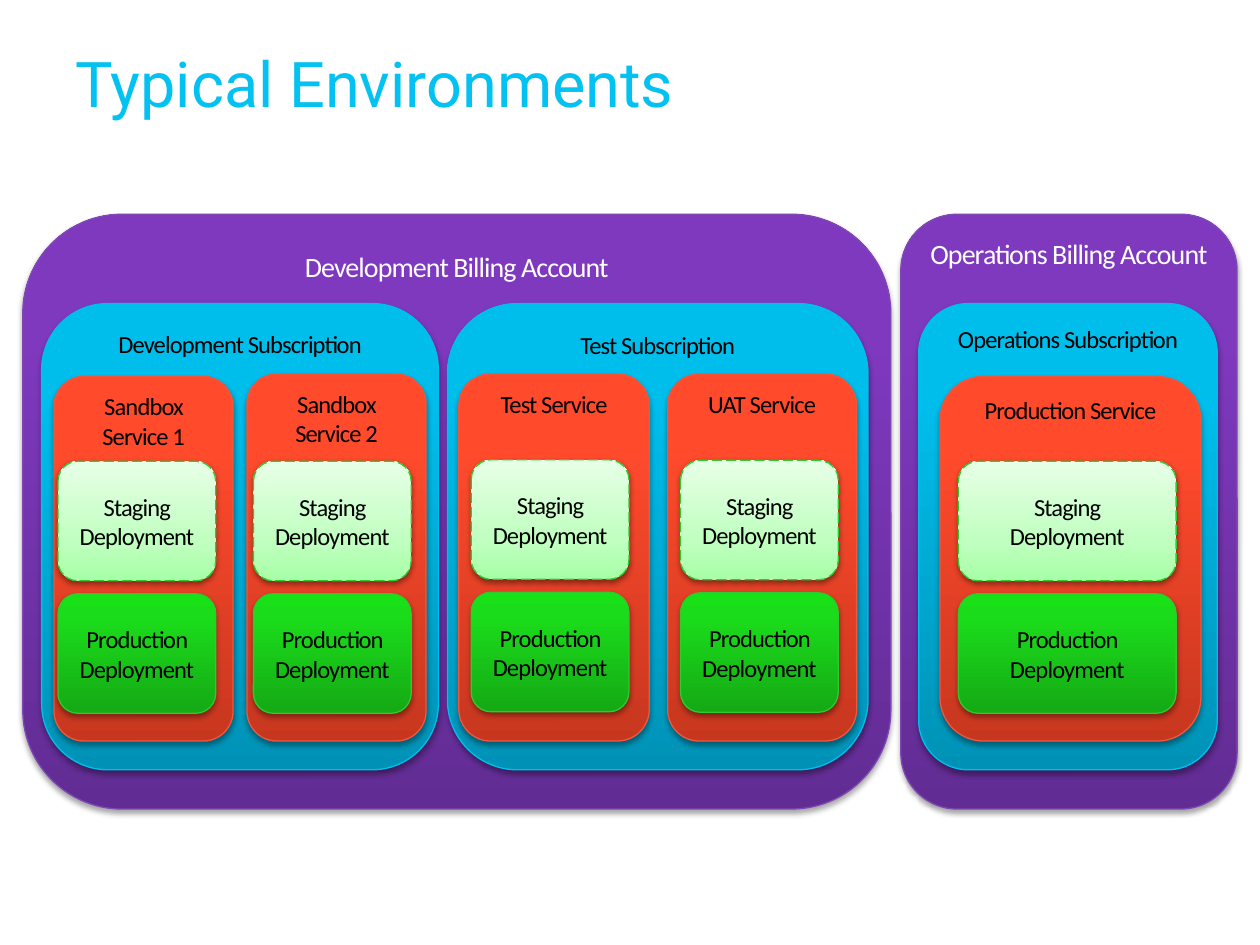
"""Build the slide of typical environments: accounts, subscriptions, services and deployments."""
from lxml.etree import SubElement
from pptx import Presentation
from pptx.dml.color import RGBColor
from pptx.enum.dml import MSO_LINE
from pptx.enum.shapes import MSO_SHAPE
from pptx.enum.text import MSO_ANCHOR, PP_ALIGN
from pptx.oxml.ns import qn
from pptx.util import Cm, Pt

TITLE = "Typical Environments"

# name, left, width
ACCOUNTS = [
    ("Development Billing Account", 0.46, 17.5),
    ("Operations Billing Account", 18.16, 6.78),
]
SUBSCRIPTIONS = [
    ("Test Subscription", 9.02, 8.48),
    ("Development Subscription", 0.84, 8.0),
    ("Operations Subscription", 18.52, 6.02),
]
# name, left, top, width, deployment left, deployment top, deployment width
SERVICES = [
    ("Sandbox Service 1", 1.09, 7.59, 3.61, 1.17, 9.3, 3.18),
    ("Sandbox Service 2", 4.98, 7.54, 3.61, 5.11, 9.3, 3.18),
    ("Test Service", 9.25, 7.54, 3.84, 9.5, 9.27, 3.18),
    ("UAT Service", 13.46, 7.54, 3.81, 13.72, 9.28, 3.18),
    ("Production Service", 18.95, 7.59, 5.26, 19.32, 9.3, 4.39),
]
DEPLOYMENTS = ["Staging Deployment", "Production Deployment"]

ACCOUNT_TOP, ACCOUNT_HEIGHT = 4.32, 11.99
SUBSCRIPTION_TOP, SUBSCRIPTION_HEIGHT = 6.12, 9.4
SERVICE_BOTTOM = 14.94
DEPLOYMENT_HEIGHT, DEPLOYMENT_PITCH = 2.41, 2.67

PURPLE = {"stops": [(0, "612C93"), (80, "7F39BF"), (100, "7F37C2")], "line": "7F47B4"}
BLUE = {"stops": [(0, "0092B6"), (80, "00BEEC"), (100, "00BFEE")], "line": "00BFEF"}
RED = {"stops": [(0, "C7371F"), (80, "FF4A2C"), (100, "FF4B2E")], "line": "F0573E"}
GREEN = {"stops": [(0, "15A915"), (80, "1BDC1B"), (100, "18E118")], "line": "2ECB2E"}
PALE = {"stops": [(0, "A7FFA7"), (35, "C1FFC1"), (100, "E7FFE7")], "line": "2ECB2E",
        "dash": MSO_LINE.LONG_DASH, "shadow": (38, 1.6)}


def color(value):
    return RGBColor.from_string(value)


def write(shape, text, size=14, font="Calibri", ink="000000", align=PP_ALIGN.CENTER,
          anchor=MSO_ANCHOR.TOP, spacing=-0.5):
    frame = shape.text_frame
    frame.word_wrap = True
    frame.vertical_anchor = anchor
    para = frame.paragraphs[0]
    para.alignment = align
    span = para.add_run()
    span.text = text
    span.font.size = Pt(size)
    span.font.name = font
    span.font.color.rgb = color(ink)
    span.font._element.set("spc", str(round(spacing * 100)))


def add_gradient(shape, stops):
    shape.fill.gradient()
    shape.fill.gradient_angle = 90
    stop_list = shape.element.spPr.find(qn("a:gradFill")).find(qn("a:gsLst"))
    for old in list(stop_list):
        stop_list.remove(old)
    for position, value in stops:
        stop = SubElement(stop_list, qn("a:gs"), pos=str(position * 1000))
        SubElement(stop, qn("a:srgbClr"), val=value)


def add_shadow(shape, opacity, distance):
    shape.shadow.inherit = False
    effects = shape.element.spPr.find(qn("a:effectLst"))
    shadow = SubElement(effects, qn("a:outerShdw"), blurRad=str(Pt(3.1)),
                        dist=str(Pt(distance)), dir="5400000", rotWithShape="0")
    shade = SubElement(shadow, qn("a:srgbClr"), val="000000")
    SubElement(shade, qn("a:alpha"), val=str(opacity * 1000))


def add_box(page, text, left, top, width, height, style, **text_format):
    box = page.shapes.add_shape(MSO_SHAPE.ROUNDED_RECTANGLE,
                                Cm(left), Cm(top), Cm(width), Cm(height))
    add_gradient(box, style["stops"])
    box.line.color.rgb = color(style["line"])
    box.line.width = Pt(0.75)
    if "dash" in style:
        box.line.dash_style = style["dash"]
    add_shadow(box, *style.get("shadow", (35, 1.8)))
    write(box, text, **text_format)


def main():
    deck = Presentation()
    deck.slide_width, deck.slide_height = Cm(25.4), Cm(19.05)
    page = deck.slides.add_slide(deck.slide_layouts[6])

    title = page.shapes.add_textbox(Cm(1.27), Cm(0.74), Cm(23.24), Cm(1.85))
    write(title, TITLE, size=36, font="Roboto", ink="03C2F1", align=PP_ALIGN.LEFT,
          anchor=MSO_ANCHOR.MIDDLE, spacing=0)

    for name, left, width in ACCOUNTS:
        add_box(page, name, left, ACCOUNT_TOP, width, ACCOUNT_HEIGHT, PURPLE,
                size=16, ink="FFFFFF")
    for name, left, width in SUBSCRIPTIONS:
        add_box(page, name, left, SUBSCRIPTION_TOP, width, SUBSCRIPTION_HEIGHT, BLUE)
    for name, left, top, width, inner_left, inner_top, inner_width in SERVICES:
        add_box(page, name, left, top, width, SERVICE_BOTTOM - top, RED)
        for row, (deployment, style) in enumerate(zip(DEPLOYMENTS, (PALE, GREEN))):
            add_box(page, deployment, inner_left, inner_top + row * DEPLOYMENT_PITCH,
                    inner_width, DEPLOYMENT_HEIGHT, style, anchor=MSO_ANCHOR.MIDDLE)

    deck.save("out.pptx")


if __name__ == "__main__":
    main()
